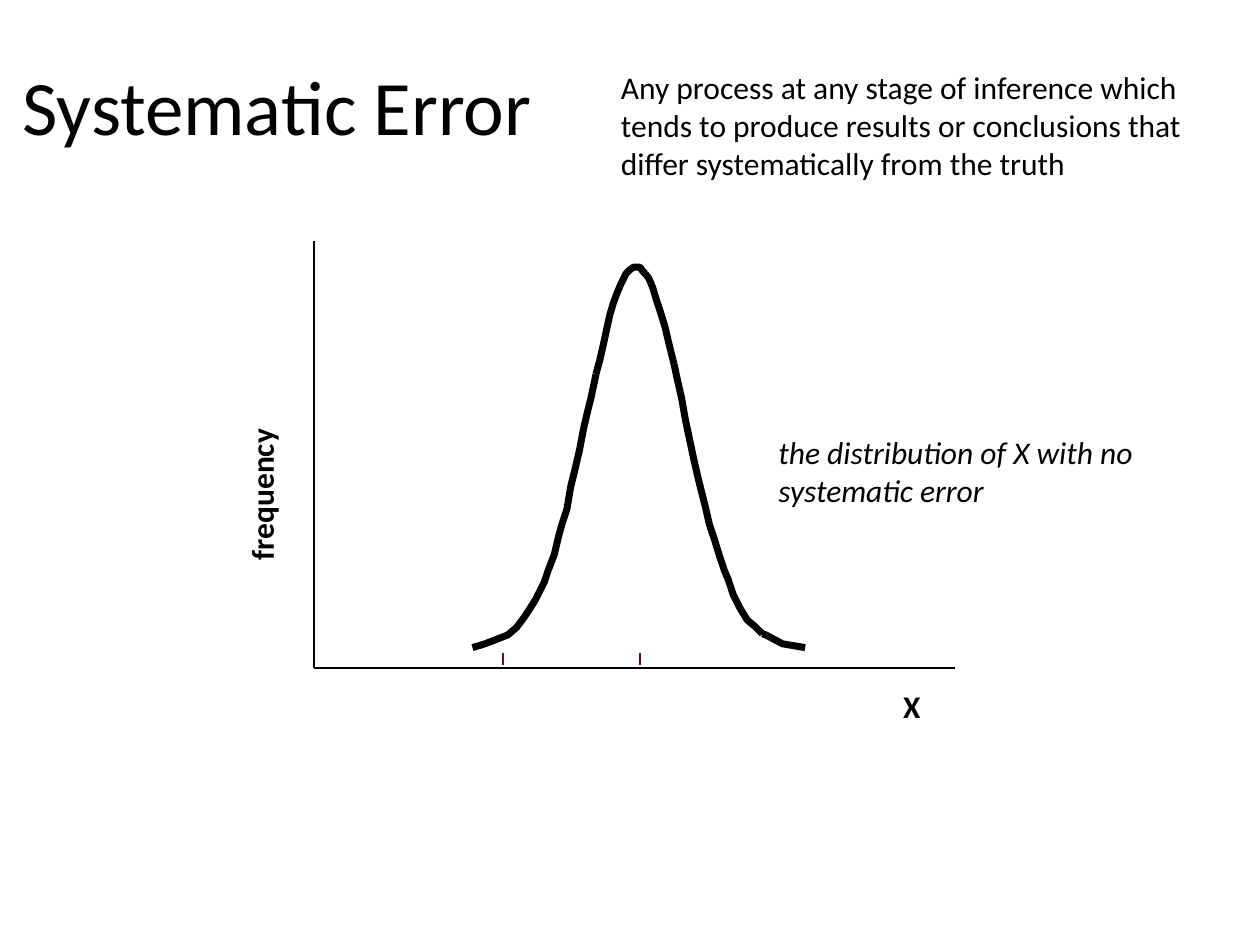
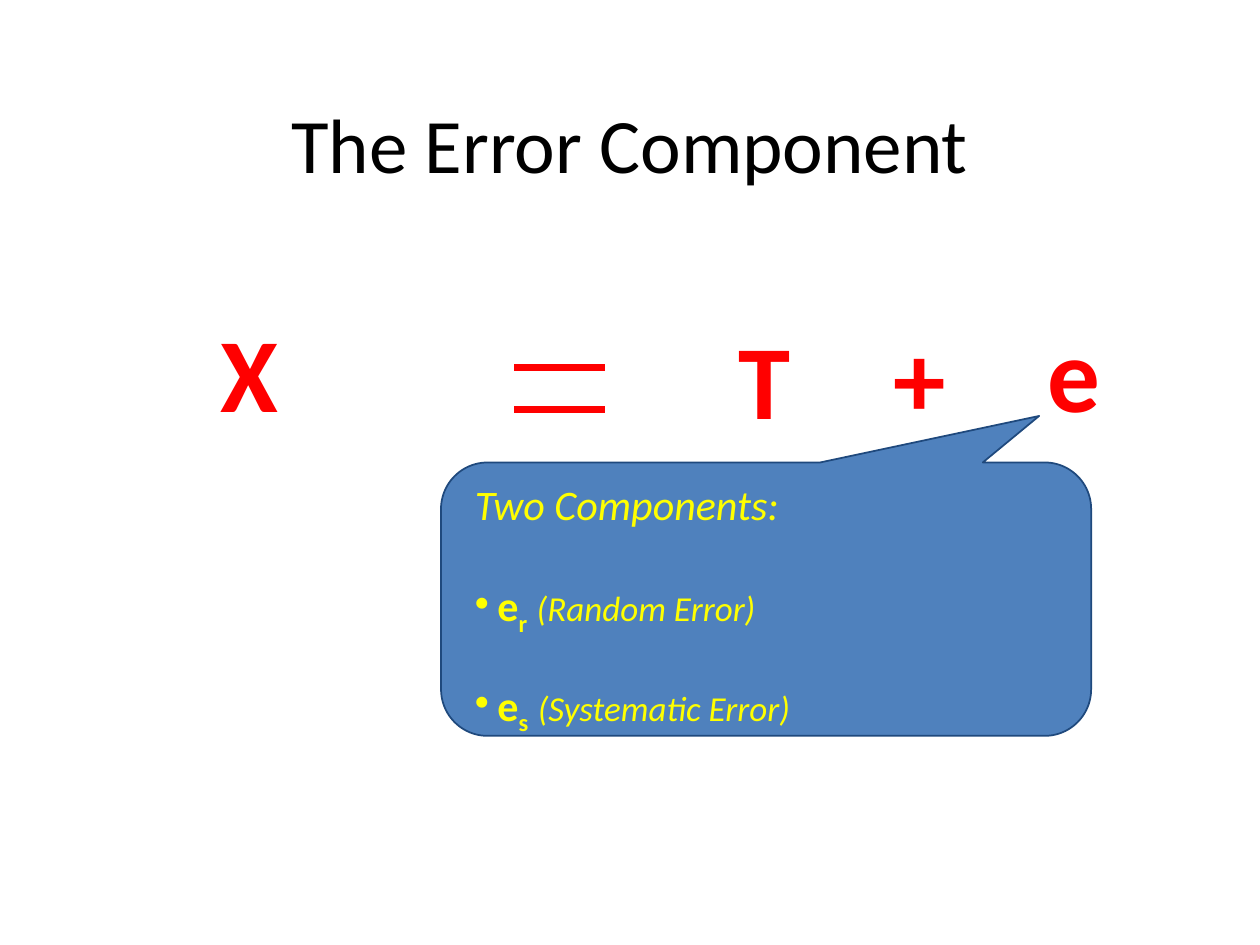
from lxml.etree import SubElement
from pptx import Presentation
from pptx.dml.color import RGBColor
from pptx.enum.shapes import MSO_CONNECTOR as Connector, MSO_SHAPE as Preset
from pptx.enum.text import MSO_ANCHOR as Anchor, MSO_AUTO_SIZE as AutoSize, PP_ALIGN as Align
from pptx.oxml.ns import qn
from pptx.util import Emu, Pt

PX = 9144  # 100 px to the inch
FONT = "Calibri"
BLACK, WHITE, RED, YELLOW = "000000", "FFFFFF", "FF0000", "FFFF00"
BLUE, NAVY, PLUM = "4F81BD", "1F497D", "6E0043"

# Bell curve, in px, as stretches that each start where the one before ends
BELL_START = (375, 514)
BELL_STRETCHES = [
    [(385, 511), (403, 504), (410, 498), (416, 490), (420, 484), (425, 476),
     (429, 468), (432, 462), (435, 453), (440, 440), (443, 427), (446, 416),
     (450, 404), (453, 386), (456, 374), (460, 357), (463, 341), (466, 328),
     (469, 316), (472, 302), (473, 297)],
    [(476, 286), (479, 273), (482, 259), (484, 250), (487, 240), (490, 232),
     (493, 225), (495, 221)],
    [(497, 217), (500, 214), (503, 212), (508, 212), (510, 215), (512, 217)],
    [(515, 221), (518, 228), (521, 238), (524, 247), (528, 260), (531, 273),
     (535, 289)],
    [(538, 303), (541, 316), (544, 333), (548, 352), (551, 366), (554, 379),
     (557, 391), (560, 403), (563, 416), (567, 428), (571, 441), (575, 453),
     (578, 460), (582, 472), (587, 482), (593, 492), (599, 497), (605, 503)],
    [(608, 504), (621, 511), (639, 514)],
]


def px(length):
    return Emu(length * PX)


def color(hex_string):
    return RGBColor.from_string(hex_string)


def set_line(shape, hex_string, width):
    shape.line.color.rgb = color(hex_string)
    shape.line.width = Pt(width)


def add_span(para, text, size, hue=BLACK, bold=False, italic=False, baseline=0):
    """Add one run; baseline is a shift in percent, negative for subscript."""
    span = para.add_run()
    span.text = text
    font = span.font
    font.name, font.size, font.bold, font.italic = FONT, Pt(size), bold, italic
    font.color.rgb = color(hue)
    if baseline:
        font._element.set("baseline", str(baseline * 1000))


def add_box(page, at, wrap=True, grow=True):
    box = page.shapes.add_textbox(*map(px, at))
    frame = box.text_frame
    frame.word_wrap = wrap
    frame.auto_size = AutoSize.SHAPE_TO_FIT_TEXT if grow else AutoSize.NONE
    return box


def add_label(page, at, text, size, wrap=True, align=Align.LEFT, **style):
    box = add_box(page, at, wrap)
    para = box.text_frame.paragraphs[0]
    para.alignment = align
    add_span(para, text, size, **style)
    return box


def add_title(page, at, text, align):
    box = add_box(page, at, grow=False)
    box.text_frame.vertical_anchor = Anchor.BOTTOM
    para = box.text_frame.paragraphs[0]
    para.alignment = align
    add_span(para, text, 44)


def add_line(page, start, end, hue, width):
    line = page.shapes.add_connector(Connector.STRAIGHT, *map(px, start + end))
    set_line(line, hue, width)
    SubElement(line._element.spPr, qn("a:effectLst"))


def add_curve(page, points):
    builder = page.shapes.build_freeform(*points[0], scale=PX)
    builder.add_line_segments(points[1:], close=False)
    curve = builder.convert_to_shape()
    curve.shadow.inherit = False
    curve.fill.background()
    set_line(curve, BLACK, 4)


def add_bullet(para, indent):
    props = para._p.get_or_add_pPr()
    props.set("marL", str(px(indent)))
    props.set("indent", str(-px(indent)))
    SubElement(props, qn("a:buChar")).set("char", "•")


def add_error_list(page):
    box = add_box(page, (367, 375, 333, 232))
    frame = box.text_frame
    add_span(frame.paragraphs[0], "Two Components:", 24, YELLOW, italic=True)
    for subscript, meaning, gap in (("r", "(Random Error)", 29),
                                    ("s", "(Systematic Error)", 24)):
        para = frame.add_paragraph()
        para.space_before = Pt(gap)
        add_bullet(para, 18)
        add_span(para, "e", 24, YELLOW, bold=True)
        add_span(para, subscript, 24, YELLOW, bold=True, baseline=-25)
        add_span(para, " ", 24, YELLOW, bold=True)
        add_span(para, meaning, 20, YELLOW, italic=True)


def add_callout(page):
    callout = page.shapes.add_shape(Preset.ROUNDED_RECTANGULAR_CALLOUT,
                                    *map(px, (350, 367, 516, 217)))
    callout.rotation = 180
    for index, value in enumerate((-0.42, 0.67, 0.17)):
        callout.adjustments[index] = value
    callout.shadow.inherit = False
    callout.fill.solid()
    callout.fill.fore_color.rgb = color(BLUE)
    set_line(callout, NAVY, 1)


def build_systematic_error(page):
    add_title(page, (8, 17, 433, 108), "Systematic Error", Align.LEFT)
    origin = (249, 530)
    for axis_end in ((758, 530), (249, 191)):
        add_line(page, origin, axis_end, BLACK, 1)
    for tick in (399, 508):
        add_line(page, (tick, 518), (tick, 528), PLUM, 1)
    start = BELL_START
    for stretch in BELL_STRETCHES:
        add_curve(page, [start] + stretch)
        start = stretch[-1]
    add_label(page, (707, 540, 42, 50), "X", 18, wrap=False, bold=True)
    frequency = add_label(page, (123, 340, 179, 50), "frequency", 18,
                          wrap=False, bold=True)
    frequency.rotation = 270
    caption = add_label(page, (608, 339, 384, 90),
                        "the distribution of X with no systematic error", 18, italic=True)
    caption.fill.solid()
    caption.fill.fore_color.rgb = color(WHITE)
    add_label(page, (483, 49, 500, 101),
              "Any process at any stage of inference which tends to produce results "
              "or conclusions that differ systematically from the truth", 18)


def build_error_component(page):
    add_title(page, (50, 30, 900, 125), "The Error Component", Align.CENTER)
    for symbol, left, top, width in (("X", 165, 239, 66), ("T", 576, 245, 62),
                                     ("+", 699, 243, 62), ("e", 821, 239, 62)):
        add_label(page, (left, top, width, 111), symbol, 60, wrap=False,
                  align=Align.CENTER, hue=RED, bold=True)
    for equals_bar in (292, 325):
        add_line(page, (408, equals_bar), (480, equals_bar), RED, 4)
    add_callout(page)
    add_error_list(page)


def main():
    deck = Presentation()
    deck.slide_width, deck.slide_height = px(1000), px(750)
    blank = deck.slide_layouts[6]
    for build in (build_systematic_error, build_error_component):
        build(deck.slides.add_slide(blank))
    deck.save("out.pptx")


if __name__ == "__main__":
    main()
